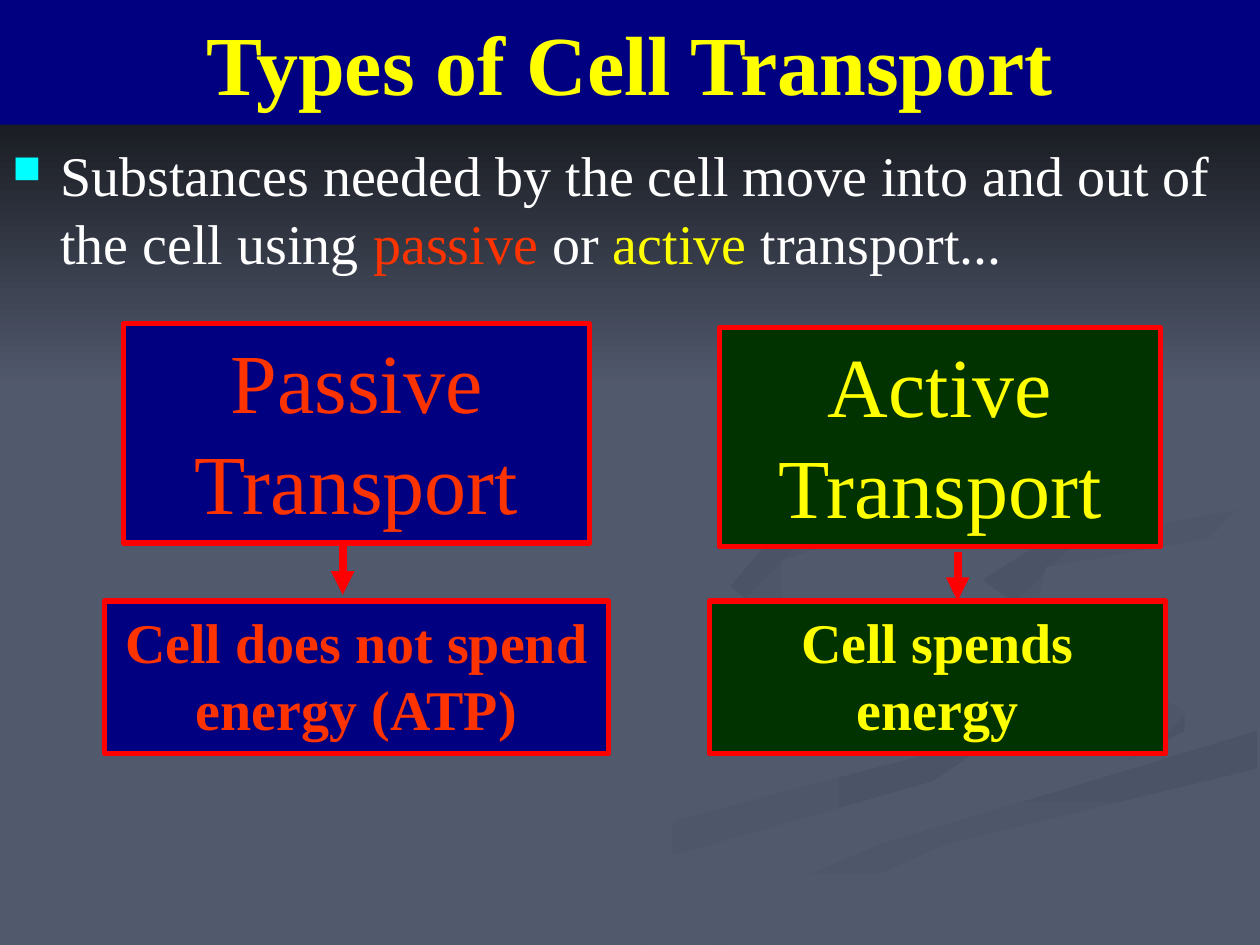
import pptx
import pptx.util
import pptx.dml.color
import pptx.enum.shapes
import pptx.enum.text
import lxml.etree
from dataclasses import dataclass
from pptx.util import Inches


@dataclass
class Theme:
    font: str = "Times New Roman"
    back: str = "51596D"
    dusk: str = "4B5366"
    black: str = "000000"
    navy: str = "000080"
    green: str = "003300"
    red: str = "FF0000"
    orange: str = "FF3300"
    yellow: str = "FFFF00"
    white: str = "FFFFFF"
    cyan: str = "00FFFF"
    big: int = 48
    mid: int = 32


theme = Theme()
rgb = pptx.dml.color.RGBColor.from_string
rect = pptx.enum.shapes.MSO_SHAPE.RECTANGLE
space = "{http://schemas.openxmlformats.org/drawingml/2006/main}"


def write(para, runs, size, bold=False):
    for words, color in runs:
        run = para.add_run()
        run.text = words
        run.font.name = theme.font
        run.font.size = pptx.util.Pt(size)
        run.font.bold = bold
        run.font.color.rgb = rgb(color)


def block(place, fill, words, color, size, bold):
    box = slide.shapes.add_shape(rect, *[Inches(n) for n in place])
    box.shadow.inherit = False
    box.fill.solid()
    box.fill.fore_color.rgb = rgb(fill)
    box.line.fill.background()
    frame = box.text_frame
    frame.word_wrap = True
    para = frame.paragraphs[0]
    para.alignment = pptx.enum.text.PP_ALIGN.CENTER
    write(para, [(words, color)], size, bold)
    return box


deck = pptx.Presentation()
deck.slide_width, deck.slide_height = Inches(10), Inches(7.5)
slide = deck.slides.add_slide(deck.slide_layouts[6])
slide.background.fill.solid()
slide.background.fill.fore_color.rgb = rgb(theme.back)

# Background ribbons and top shade: first colour, last colour, angle, outline
ribbons = [
    (theme.back, theme.dusk, 0, [
        (4, 7.3), (5.4, 6.5), (7.7, 5.9), (7.99, 5.8), (7.4, 6.2), (5.3, 6.8)]),
    (theme.back, theme.dusk, 45, [
        (9.4, 5.65), (9, 5.4), (9.15, 5.7), (8.94, 6.05), (9.4, 5.8)]),
    (theme.dusk, theme.back, 90, [
        (5.1, 7.5), (7, 6.7), (9.98, 5.8), (9.98, 6.1), (7.5, 6.7), (5.7, 7.5)]),
    (theme.dusk, theme.back, 45, [
        (7.8, 4.6), (8.2, 4.35), (9.98, 4.02), (9.98, 4.2), (8.3, 4.5), (8.2, 4.9)]),
    (theme.dusk, theme.back, 45, [
        (5.8, 4.65), (6.1, 4.3), (7.3, 4.05), (6.2, 4.45), (6.2, 5)]),
    (theme.black, theme.back, 90, [(0, 0), (0, 3.08), (10, 3.08), (10, 0)]),
]
for first, last, turn, points in ribbons:
    start, *rest = [(Inches(x), Inches(y)) for x, y in points]
    pen = slide.shapes.build_freeform(*start)
    pen.add_line_segments(rest, close=True)
    shade = pen.convert_to_shape()
    shade.shadow.inherit = False
    shade.line.fill.background()
    shade.fill.gradient()
    shade.fill.gradient_angle = (360 - turn) % 360
    for stop, color in zip(shade.fill.gradient_stops, (first, last)):
        stop.color.rgb = rgb(color)

# Title band
block((0, 0, 10, 0.99), theme.navy, "Types of Cell Transport",
      theme.yellow, theme.big, True)

# Bulleted statement
body = slide.shapes.add_textbox(Inches(0), Inches(1.07), Inches(10), Inches(1.26))
body.text_frame.word_wrap = True
para = body.text_frame.paragraphs[0]
write(para, [
    ("Substances needed by the cell move into and out of the cell using ", theme.white),
    ("passive", theme.orange),
    (" or ", theme.white),
    ("active", theme.yellow),
    (" transport...", theme.white),
], theme.mid)
props = para._p.get_or_add_pPr()
props.set("marL", str(Inches(0.38)))
props.set("indent", str(-Inches(0.38)))
before = lxml.etree.SubElement(props, space + "spcBef")
lxml.etree.SubElement(before, space + "spcPct", val="20000")
tint = lxml.etree.SubElement(props, space + "buClr")
lxml.etree.SubElement(tint, space + "srgbClr", val=theme.cyan)
lxml.etree.SubElement(props, space + "buSzPct", val="70000")
lxml.etree.SubElement(props, space + "buChar", char="■")

# Transport types and their energy cost
boxes = [
    ((0.98, 2.57, 3.7, 1.74), theme.navy, "Passive Transport", theme.orange, theme.big, False),
    ((5.71, 2.6, 3.5, 1.74), theme.green, "Active Transport", theme.yellow, theme.big, False),
    ((0.83, 4.77, 4, 1.21), theme.navy, "Cell does not spend energy (ATP)",
     theme.orange, theme.mid, True),
    ((5.63, 4.77, 3.62, 1.21), theme.green, "Cell spends energy", theme.yellow, theme.mid, True),
]
for item in boxes:
    box = block(*item)
    box.line.color.rgb = rgb(theme.red)
    box.line.width = pptx.util.Pt(3)
    box.text_frame.vertical_anchor = pptx.enum.text.MSO_ANCHOR.TOP
    box.text_frame.auto_size = pptx.enum.text.MSO_AUTO_SIZE.SHAPE_TO_FIT_TEXT
    props = box.text_frame.paragraphs[0]._p.get_or_add_pPr()
    before = lxml.etree.SubElement(props, space + "spcBef")
    lxml.etree.SubElement(before, space + "spcPct", val="50000")

# Arrows from type to cost
for x, top, low in [(2.72, 4.3, 4.72), (7.6, 4.38, 4.77)]:
    arrow = slide.shapes.add_connector(
        pptx.enum.shapes.MSO_CONNECTOR.STRAIGHT,
        Inches(x), Inches(top), Inches(x), Inches(low))
    arrow.line.color.rgb = rgb(theme.red)
    arrow.line.width = pptx.util.Pt(4.5)
    props = arrow._element.spPr
    lxml.etree.SubElement(props.find(space + "ln"), space + "tailEnd", type="triangle")
    lxml.etree.SubElement(props, space + "effectLst")

deck.save("out.pptx")
